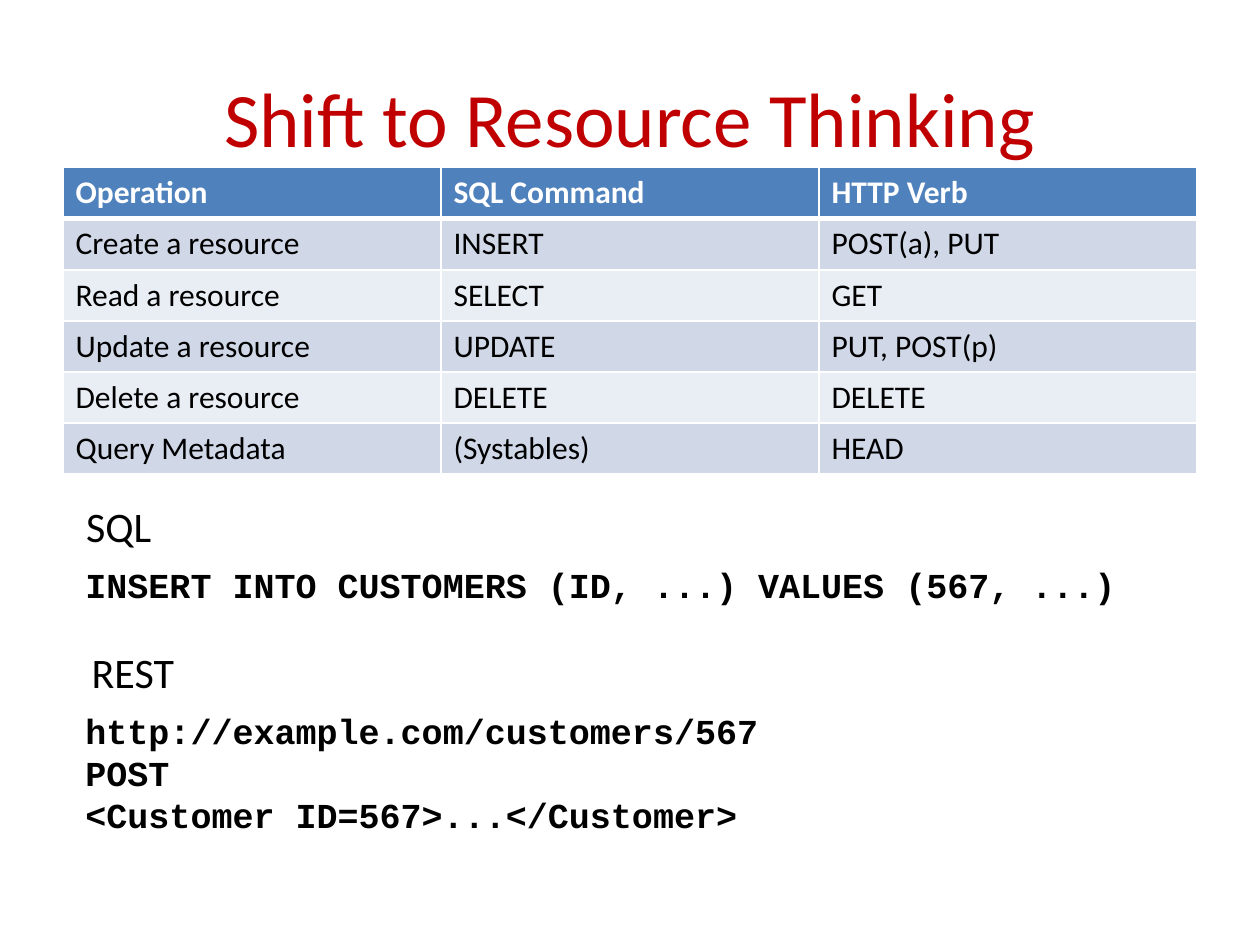
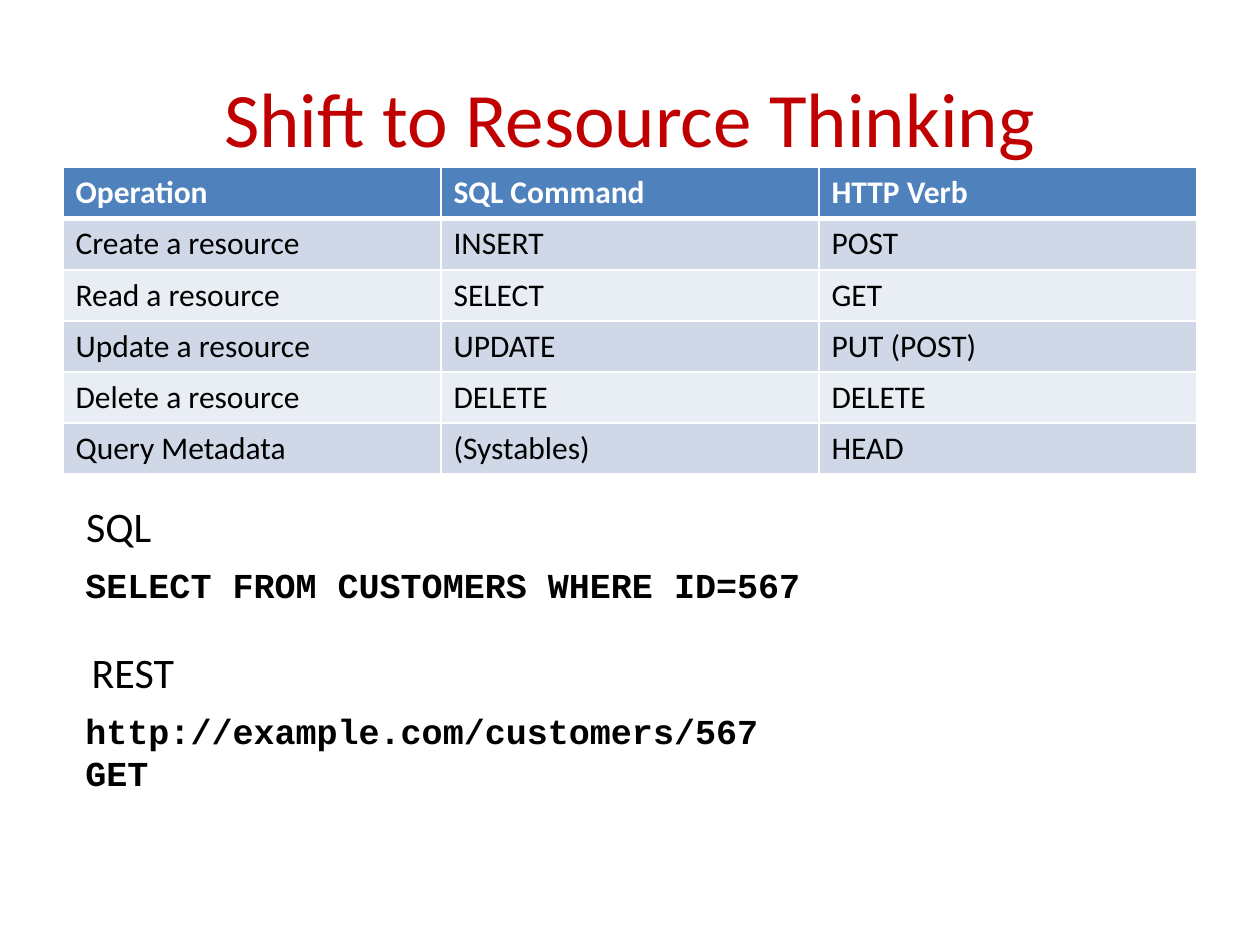
from dataclasses import dataclass

from lxml import etree
from pptx import Presentation
from pptx.dml.color import RGBColor
from pptx.enum.shapes import MSO_SHAPE
from pptx.enum.text import MSO_ANCHOR, PP_ALIGN
from pptx.oxml.ns import qn
from pptx.slide import Slide
from pptx.table import _Cell
from pptx.text.text import _Paragraph
from pptx.util import Inches, Pt

RECTANGLE = MSO_SHAPE.RECTANGLE
TOP, MIDDLE = MSO_ANCHOR.TOP, MSO_ANCHOR.MIDDLE
LEFT, CENTER, RIGHT = PP_ALIGN.LEFT, PP_ALIGN.CENTER, PP_ALIGN.RIGHT

RED = RGBColor(0xC0, 0x00, 0x00)
BLACK = RGBColor(0x00, 0x00, 0x00)
WHITE = RGBColor(0xFF, 0xFF, 0xFF)
HEADER_BLUE = RGBColor(0x4F, 0x81, 0xBD)
BAND_DARK = RGBColor(0xD0, 0xD8, 0xE8)
BAND_LIGHT = RGBColor(0xE9, 0xED, 0xF4)

TITLE = "Shift to Resource Thinking"
TITLE_ONLY_LAYOUT = 5
MARGIN, CONTENT_WIDTH = 0.5, 9
TABLE_TOP, TABLE_HEIGHT = 1.33, 2.43
CODE_LEFT, CODE_LINE_HEIGHT, CODE_PADDING = 0.58, 0.33, 0.09
LABEL_HEIGHT = 0.51
THIN_BORDER, HEADER_BORDER = 1, 3

HEADERS = ("Operation", "SQL Command", "HTTP Verb")
OPERATIONS = (
    ("Create a resource", "INSERT"),
    ("Read a resource", "SELECT"),
    ("Update a resource", "UPDATE"),
    ("Delete a resource", "DELETE"),
    ("Query Metadata", "(Systables)"),
)


@dataclass(frozen=True)
class TextStyle:
    size: int
    color: RGBColor = BLACK
    bold: bool = False
    font: str = "Calibri"
    align: PP_ALIGN = LEFT


@dataclass(frozen=True)
class CodeSection:
    label: str
    label_top: float
    label_width: float
    code_top: float


@dataclass(frozen=True)
class ResourceExample:
    verbs: tuple[str, ...]
    sql: tuple[str, ...]
    rest: tuple[str, ...]


TITLE_STYLE = TextStyle(44, RED, align=CENTER)
HEADER_STYLE = TextStyle(18, WHITE, bold=True)
BODY_STYLE = TextStyle(18)
LABEL_STYLE = TextStyle(24, align=RIGHT)
CODE_STYLE = TextStyle(20, bold=True, font="Courier New")

SQL_SECTION = CodeSection("SQL", 3.92, 0.8, 4.42)
REST_SECTION = CodeSection("REST", 5.08, 0.98, 5.58)

EXAMPLES = (
    ResourceExample(
        ("POST(a), PUT", "GET", "PUT, POST(p)", "DELETE", "HEAD"),
        ("INSERT INTO CUSTOMERS (ID, ...) VALUES (567, ...)",),
        ("http://example.com/customers/567", "POST", "<Customer ID=567>...</Customer>"),
    ),
    ResourceExample(
        ("POST", "GET", "PUT (POST)", "DELETE", "HEAD"),
        ("SELECT FROM CUSTOMERS WHERE ID=567",),
        ("http://example.com/customers/567", "GET"),
    ),
)


def write(para: _Paragraph, text: str, style: TextStyle) -> None:
    para.alignment = style.align
    span = para.add_run()
    span.text = text
    span.font.name = style.font
    span.font.size = Pt(style.size)
    span.font.bold = style.bold
    span.font.color.rgb = style.color


def add_title(slide: Slide) -> None:
    title = slide.shapes.title
    title.left, title.top = Inches(MARGIN), Inches(0.3)
    title.width, title.height = Inches(CONTENT_WIDTH), Inches(1.25)
    title.text_frame.vertical_anchor = MIDDLE
    write(title.text_frame.paragraphs[0], TITLE, TITLE_STYLE)


def set_borders(cell: _Cell, top: int, bottom: int) -> None:
    """Draw white borders, widths in points; they must precede the cell fill."""
    properties = cell._tc.get_or_add_tcPr()
    widths = {"lnL": THIN_BORDER, "lnR": THIN_BORDER, "lnT": top, "lnB": bottom}
    for position, (side, width) in enumerate(widths.items()):
        line = etree.Element(qn(f"a:{side}"), w=str(Pt(width)))
        fill = etree.SubElement(line, qn("a:solidFill"))
        etree.SubElement(fill, qn("a:srgbClr"), val=str(WHITE))
        properties.insert(position, line)


def add_operations_table(slide: Slide, verbs: tuple[str, ...]) -> None:
    rows = [HEADERS] + [(*names, verb) for names, verb in zip(OPERATIONS, verbs)]
    table = slide.shapes.add_table(
        len(rows), len(HEADERS), Inches(MARGIN), Inches(TABLE_TOP),
        Inches(CONTENT_WIDTH), Inches(TABLE_HEIGHT),
    ).table
    for row_index, texts in enumerate(rows):
        is_header = row_index == 0
        band = BAND_DARK if row_index % 2 else BAND_LIGHT
        for column_index, text in enumerate(texts):
            cell = table.cell(row_index, column_index)
            cell.fill.solid()
            cell.fill.fore_color.rgb = HEADER_BLUE if is_header else band
            set_borders(
                cell,
                top=HEADER_BORDER if row_index == 1 else THIN_BORDER,
                bottom=HEADER_BORDER if is_header else THIN_BORDER,
            )
            style = HEADER_STYLE if is_header else BODY_STYLE
            write(cell.text_frame.paragraphs[0], text, style)


def add_code_section(slide: Slide, section: CodeSection, lines: tuple[str, ...]) -> None:
    height = len(lines) * CODE_LINE_HEIGHT + CODE_PADDING
    box = slide.shapes.add_shape(
        RECTANGLE, Inches(CODE_LEFT), Inches(section.code_top),
        Inches(CONTENT_WIDTH), Inches(height),
    )
    box.shadow.inherit = False
    box.fill.solid()
    box.fill.fore_color.rgb = WHITE
    box.line.fill.background()
    frame = box.text_frame
    frame.word_wrap = True
    frame.vertical_anchor = TOP
    for index, line in enumerate(lines):
        para = frame.add_paragraph() if index else frame.paragraphs[0]
        write(para, line, CODE_STYLE)

    label = slide.shapes.add_textbox(
        Inches(MARGIN), Inches(section.label_top),
        Inches(section.label_width), Inches(LABEL_HEIGHT),
    )
    label.text_frame.word_wrap = True
    write(label.text_frame.paragraphs[0], section.label, LABEL_STYLE)


def main() -> None:
    deck = Presentation()
    deck.slide_width, deck.slide_height = Inches(10), Inches(7.5)
    for example in EXAMPLES:
        slide = deck.slides.add_slide(deck.slide_layouts[TITLE_ONLY_LAYOUT])
        add_title(slide)
        add_operations_table(slide, example.verbs)
        add_code_section(slide, SQL_SECTION, example.sql)
        add_code_section(slide, REST_SECTION, example.rest)
    deck.save("out.pptx")


if __name__ == "__main__":
    main()
